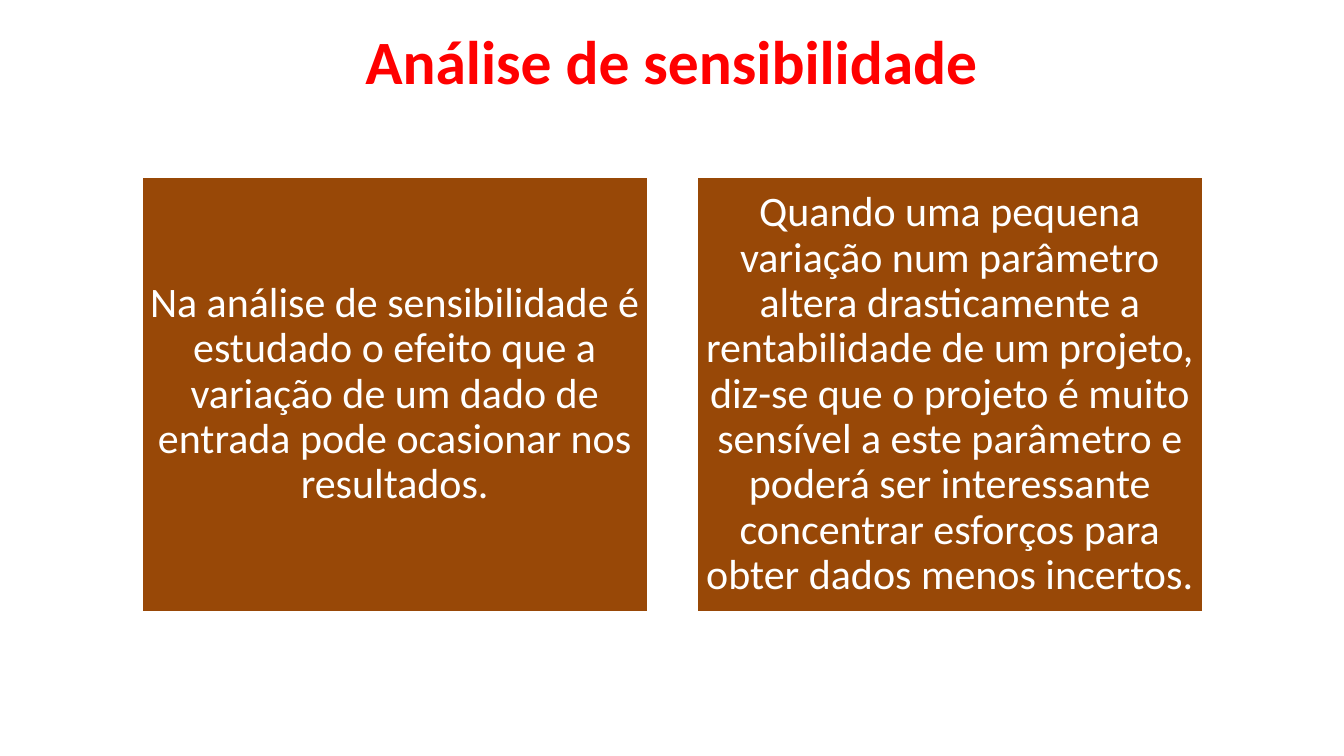
import pptx
import pptx.util
import pptx.dml.color
import pptx.enum.shapes
import pptx.enum.text

Cm, Pt = pptx.util.Cm, pptx.util.Pt


def color(code):
    return pptx.dml.color.RGBColor.from_string(code)


def write(shape, text, size, code, inset):
    frame = shape.text_frame
    frame.word_wrap = True
    frame.vertical_anchor = pptx.enum.text.MSO_ANCHOR.MIDDLE
    frame.margin_left = frame.margin_right = Cm(inset)
    frame.margin_top = frame.margin_bottom = Cm(inset)
    para = frame.paragraphs[0]
    para.text = text
    para.alignment = pptx.enum.text.PP_ALIGN.CENTER
    para.font.name = "Calibri"
    para.font.size = Pt(size)
    para.font.color.rgb = color(code)
    return para


deck = pptx.Presentation()
deck.slide_width = Cm(33.87)
deck.slide_height = Cm(19.05)
slide = deck.slides.add_slide(deck.slide_layouts[6])

# Title
title = slide.shapes.add_textbox(0, 0, deck.slide_width, Cm(3))
para = write(title, "Análise de sensibilidade", 44, "FF0000", 0.13)
para.font.bold = True

# Two cards side by side
cards = [
    "Na análise de sensibilidade é estudado o efeito que a variação de um "
    "dado de entrada pode ocasionar nos resultados.",
    "Quando uma pequena variação num parâmetro altera drasticamente a "
    "rentabilidade de um projeto, diz-se que o projeto é muito sensível a "
    "este parâmetro e poderá ser interessante concentrar esforços para "
    "obter dados menos incertos.",
]
left, top, width, height, gap = 3.56, 4.45, 12.78, 10.99, 1.21
for i, text in enumerate(cards):
    card = slide.shapes.add_shape(
        pptx.enum.shapes.MSO_SHAPE.RECTANGLE,
        Cm(left + i * (width + gap)), Cm(top), Cm(width), Cm(height))
    card.shadow.inherit = False
    card.fill.solid()
    card.fill.fore_color.rgb = color("984807")
    card.line.color.rgb = color("FFFFFF")
    card.line.width = Pt(2)
    para = write(card, text, 30, "FFFFFF", 0.05)
    para.line_spacing = 0.9

deck.save("out.pptx")
